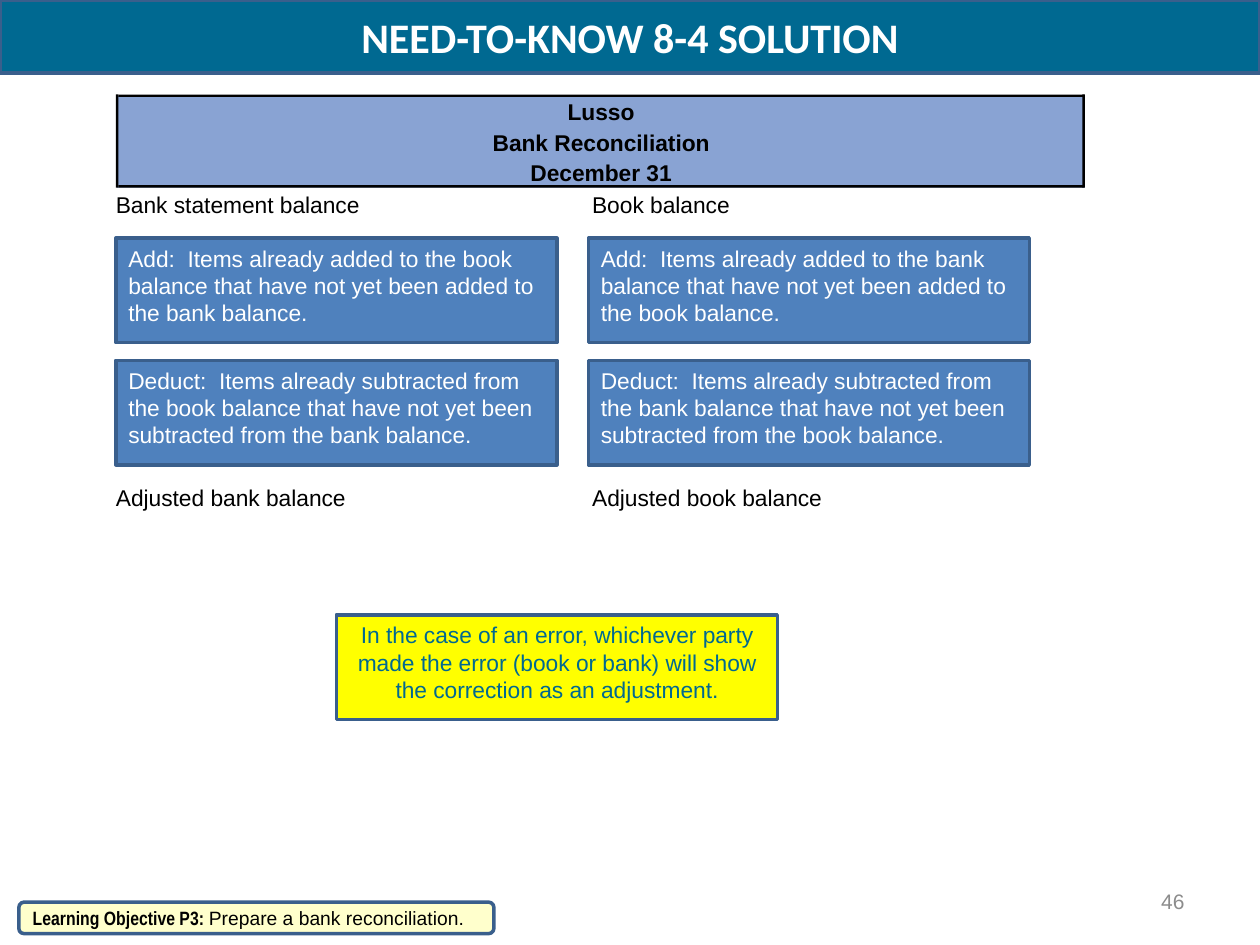
"""Build the bank reconciliation solution slide."""
from dataclasses import dataclass
from typing import NamedTuple

from pptx import Presentation
from pptx import util as u
from pptx.dml.color import RGBColor
from pptx.enum import shapes, text


@dataclass(frozen=True)
class Theme:
    teal: str = "006991"
    blue: str = "4F81BD"
    heading: str = "89A3D3"
    edge: str = "3A5F8C"
    yellow: str = "FFFF00"
    cream: str = "FFFFCC"
    black: str = "000000"
    white: str = "FFFFFF"
    grey: str = "8C8C8C"
    font: str = "Arial"
    title_font: str = "Calibri"
    narrow_font: str = "Arial Narrow"
    title: float = 24
    body: float = 13
    number: float = 12
    footer: float = 11
    border: float = 2


THEME = Theme()
KIND = shapes.MSO_SHAPE
ALIGN = text.PP_ALIGN
ANCHOR = text.MSO_ANCHOR


class Area(NamedTuple):
    left: float
    top: float
    width: float
    height: float


class Span(NamedTuple):
    words: str
    color: str = THEME.black
    size: float = THEME.body
    font: str = THEME.font
    bold: bool = False


class Label(NamedTuple):
    words: str
    width: float


class Column(NamedTuple):
    label_left: float
    card_left: float
    opening: Label
    cards: tuple[str, str]
    closing: Label


def inches(area: Area) -> list[u.Length]:
    return [u.Inches(value) for value in area]


def apply(target, values: dict) -> None:
    for name, value in values.items():
        setattr(target, name, value)


def write(box, spans: list[Span], align=ALIGN.LEFT, **frame) -> None:
    apply(box.text_frame, {"word_wrap": True, "vertical_anchor": ANCHOR.TOP} | frame)
    para = box.text_frame.paragraphs[0]
    para.alignment = align
    for item in spans:
        span = para.add_run()
        span.text = item.words
        apply(span.font, {"name": item.font, "size": u.Pt(item.size), "bold": item.bold})
        span.font.color.rgb = RGBColor.from_string(item.color)


def add_block(page, area: Area, fill: str, edge: str | None = None, kind=KIND.RECTANGLE):
    block = page.shapes.add_shape(kind, *inches(area))
    block.shadow.inherit = False
    block.fill.solid()
    block.fill.fore_color.rgb = RGBColor.from_string(fill)
    if edge:
        block.line.color.rgb = RGBColor.from_string(edge)
        block.line.width = u.Pt(THEME.border)
    else:
        block.line.fill.background()
    return block


def add_label(page, area: Area, span: Span, align=ALIGN.LEFT) -> None:
    box = page.shapes.add_textbox(*inches(area))
    margins = {f"margin_{side}": 0 for side in ("left", "top", "right", "bottom")}
    write(box, [span], align, word_wrap=False,
          auto_size=text.MSO_AUTO_SIZE.SHAPE_TO_FIT_TEXT, **margins)


def add_card(page, left: float, top: float, words: str, fill: str = THEME.blue,
             color: str = THEME.white, align=ALIGN.LEFT) -> None:
    card = add_block(page, Area(left, top, 3.5, 0.83), fill, THEME.edge)
    write(card, [Span(words, color)], align)


def add_heading(page) -> None:
    add_block(page, Area(0.93, 0.76, 7.68, 0.73), THEME.heading)
    lines = (Label("Lusso", 0.59), Label("Bank Reconciliation", 1.78), Label("December 31", 1.19))
    for row, line in enumerate(lines):
        area = Area(4.77 - line.width / 2, 0.78 + 0.24 * row, line.width, 0.24)
        add_label(page, area, Span(line.words, bold=True), ALIGN.CENTER)
    for left in (0.92, 8.59):
        add_block(page, Area(left, 0.75, 0.02, 0.74), THEME.black)
    for top in (0.75, 1.47):
        add_block(page, Area(0.94, top, 7.66, 0.02), THEME.black)


def add_column(page, column: Column) -> None:
    for top, label in ((1.51, column.opening), (3.84, column.closing)):
        add_label(page, Area(column.label_left, top, label.width, 0.25), Span(label.words))
    for row, words in enumerate(column.cards):
        add_card(page, column.card_left, 1.89 + 0.97 * row, words)


def card_texts(source: str, target: str) -> tuple[str, str]:
    return (
        f"Add:  Items already added to the {source} balance that have not yet "
        f"been added to the {target} balance.",
        f"Deduct:  Items already subtracted from the {source} balance that have not yet "
        f"been subtracted from the {target} balance.",
    )


def main() -> None:
    deck = Presentation()
    apply(deck, {"slide_width": u.Inches(10), "slide_height": u.Inches(7.5)})
    page = deck.slides.add_slide(deck.slide_layouts[6])

    banner = add_block(page, Area(0, 0, 10, 0.58), THEME.teal, THEME.edge)
    title = Span("NEED-TO-KNOW 8-4 SOLUTION", THEME.white, THEME.title, THEME.title_font, True)
    write(banner, [title], ALIGN.CENTER, vertical_anchor=ANCHOR.MIDDLE)

    add_heading(page)
    columns = (
        Column(0.92, 0.92, Label("Bank statement balance", 2.1), card_texts("book", "bank"),
               Label("Adjusted bank balance", 1.88)),
        Column(4.7, 4.67, Label("Book balance", 1.16), card_texts("bank", "book"),
               Label("Adjusted book balance", 1.88)),
    )
    for column in columns:
        add_column(page, column)
    add_card(page, 2.67, 4.88,
             "In the case of an error, whichever party made the error (book or bank) "
             "will show the correction as an adjustment.",
             THEME.yellow, THEME.teal, ALIGN.CENTER)

    number = page.shapes.add_textbox(*inches(Area(7.17, 6.95, 2.33, 0.4)))
    write(number, [Span("46", THEME.grey, THEME.number)], ALIGN.RIGHT,
          vertical_anchor=ANCHOR.MIDDLE)

    objective = add_block(page, Area(0.15, 7.16, 3.77, 0.25), THEME.cream, THEME.edge,
                          KIND.ROUNDED_RECTANGLE)
    write(objective, [
        Span("Learning Objective P3: ", size=THEME.footer, font=THEME.narrow_font, bold=True),
        Span("Prepare a bank reconciliation.", size=THEME.footer),
    ], vertical_anchor=ANCHOR.MIDDLE)

    deck.save("out.pptx")


if __name__ == "__main__":
    main()
